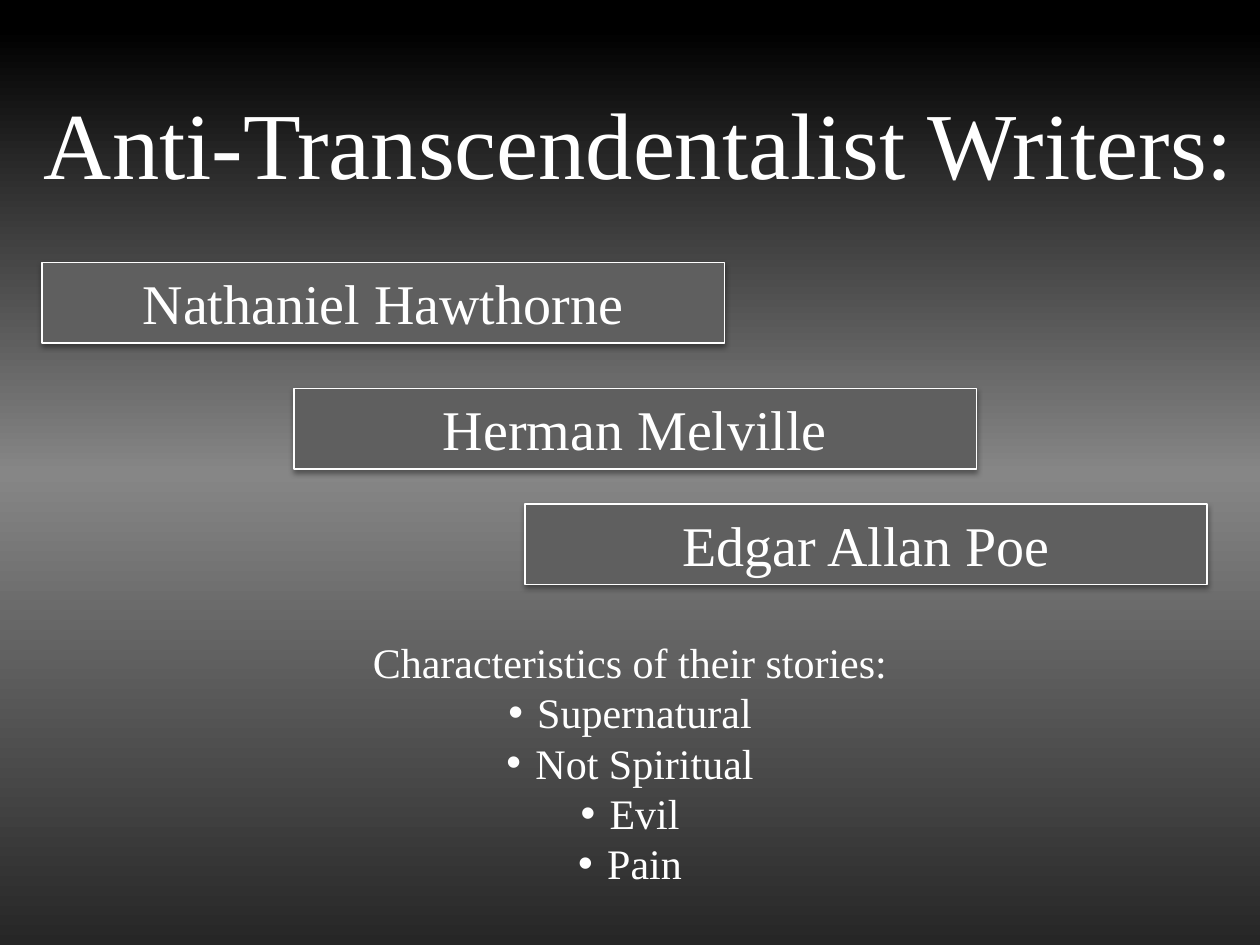
from lxml.etree import SubElement
from pptx import Presentation
from pptx.dml.color import RGBColor
from pptx.enum.shapes import MSO_SHAPE
from pptx.enum.text import MSO_ANCHOR, PP_ALIGN
from pptx.oxml import parse_xml
from pptx.oxml.ns import nsdecls, qn
from pptx.util import Inches, Pt

WHITE = RGBColor(0xFF, 0xFF, 0xFF)
PANEL_GREY = RGBColor(0x5F, 0x5F, 0x5F)
BLACK = RGBColor(0x00, 0x00, 0x00)
CHARCOAL = RGBColor(0x26, 0x26, 0x26)
MID_GREY = RGBColor(0x86, 0x86, 0x86)

FONT = "Times New Roman"
SLIDE_W, SLIDE_H = Inches(10), Inches(7.5)
COLUMN, ROW = SLIDE_W / 120, SLIDE_H / 90
BULLET_INDENT = Inches(0.23)

# Name with the column and row of its panel
WRITERS = [("Nathaniel Hawthorne", 4, 25), ("Herman Melville", 28, 37), ("Edgar Allan Poe", 50, 48)]
TRAITS = ["Supernatural", "Not Spiritual", "Evil", "Pain"]


def cells(column, row, columns, rows):
    """Left, top, width and height of an area of the slide grid."""
    return (round(column * COLUMN), round(row * ROW),
            round(columns * COLUMN), round(rows * ROW))


def paint_background(slide):
    """Fill the slide with a gradient running from bottom to top."""
    stops = [(0, CHARCOAL), (50, MID_GREY), (97, BLACK)]
    stop_xml = "".join(
        f'<a:gs pos="{share * 1000}"><a:srgbClr val="{color}"/></a:gs>' for share, color in stops)
    properties = slide.background.fill  # creates the background element
    properties.solid()
    background = slide.element.find(".//" + qn("p:bgPr"))
    background.replace(background[0], parse_xml(
        f'<a:gradFill {nsdecls("a")} rotWithShape="1"><a:gsLst>{stop_xml}</a:gsLst>'
        '<a:lin ang="16200000" scaled="0"/></a:gradFill>'))


def write(paragraph, words, size, align=PP_ALIGN.CENTER):
    paragraph.alignment = align
    run = paragraph.add_run()
    run.text = words
    run.font.name = FONT
    run.font.size = Pt(size)
    run.font.color.rgb = WHITE


def add_bullet(paragraph):
    properties = paragraph._p.get_or_add_pPr()
    properties.set("marL", str(BULLET_INDENT))
    properties.set("indent", str(-BULLET_INDENT))
    SubElement(properties, qn("a:buFont")).set("typeface", "Arial")
    SubElement(properties, qn("a:buChar")).set("char", "•")


def add_soft_shadow(panel):
    panel.shadow.inherit = False
    effects = panel._element.spPr.find(qn("a:effectLst"))
    effects.append(parse_xml(
        f'<a:outerShdw {nsdecls("a")} blurRad="{Pt(3.1)}" dist="{Pt(1.6)}" dir="5400000" '
        f'rotWithShape="0"><a:srgbClr val="{BLACK}"><a:alpha val="38000"/></a:srgbClr>'
        '</a:outerShdw>'))


def add_text_area(slide, area):
    frame = slide.shapes.add_textbox(*area).text_frame
    frame.word_wrap = True
    return frame


def add_title(slide, words):
    title = add_text_area(slide, cells(3, 6, 120, 15))
    title.vertical_anchor = MSO_ANCHOR.MIDDLE
    write(title.paragraphs[0], words, 54, PP_ALIGN.LEFT)


def add_writer(slide, name, column, row):
    panel = slide.shapes.add_shape(MSO_SHAPE.RECTANGLE, *cells(column, row, 65, 7.68))
    panel.fill.solid()
    panel.fill.fore_color.rgb = PANEL_GREY
    panel.line.color.rgb = WHITE
    panel.line.width = Pt(1)
    add_soft_shadow(panel)
    panel.text_frame.word_wrap = True
    panel.text_frame.vertical_anchor = MSO_ANCHOR.TOP
    write(panel.text_frame.paragraphs[0], name, 32)


def add_traits(slide, heading, traits):
    body = add_text_area(slide, cells(4, 60, 112, 25.44))
    write(body.paragraphs[0], heading, 24)
    for trait in traits:
        paragraph = body.add_paragraph()
        write(paragraph, trait, 24)
        add_bullet(paragraph)


def main():
    deck = Presentation()
    deck.slide_width, deck.slide_height = SLIDE_W, SLIDE_H
    slide = deck.slides.add_slide(deck.slide_layouts[6])
    paint_background(slide)
    add_title(slide, "Anti-Transcendentalist Writers:")
    for name, column, row in WRITERS:
        add_writer(slide, name, column, row)
    add_traits(slide, "Characteristics of their stories:", TRAITS)
    deck.save("out.pptx")


if __name__ == "__main__":
    main()
